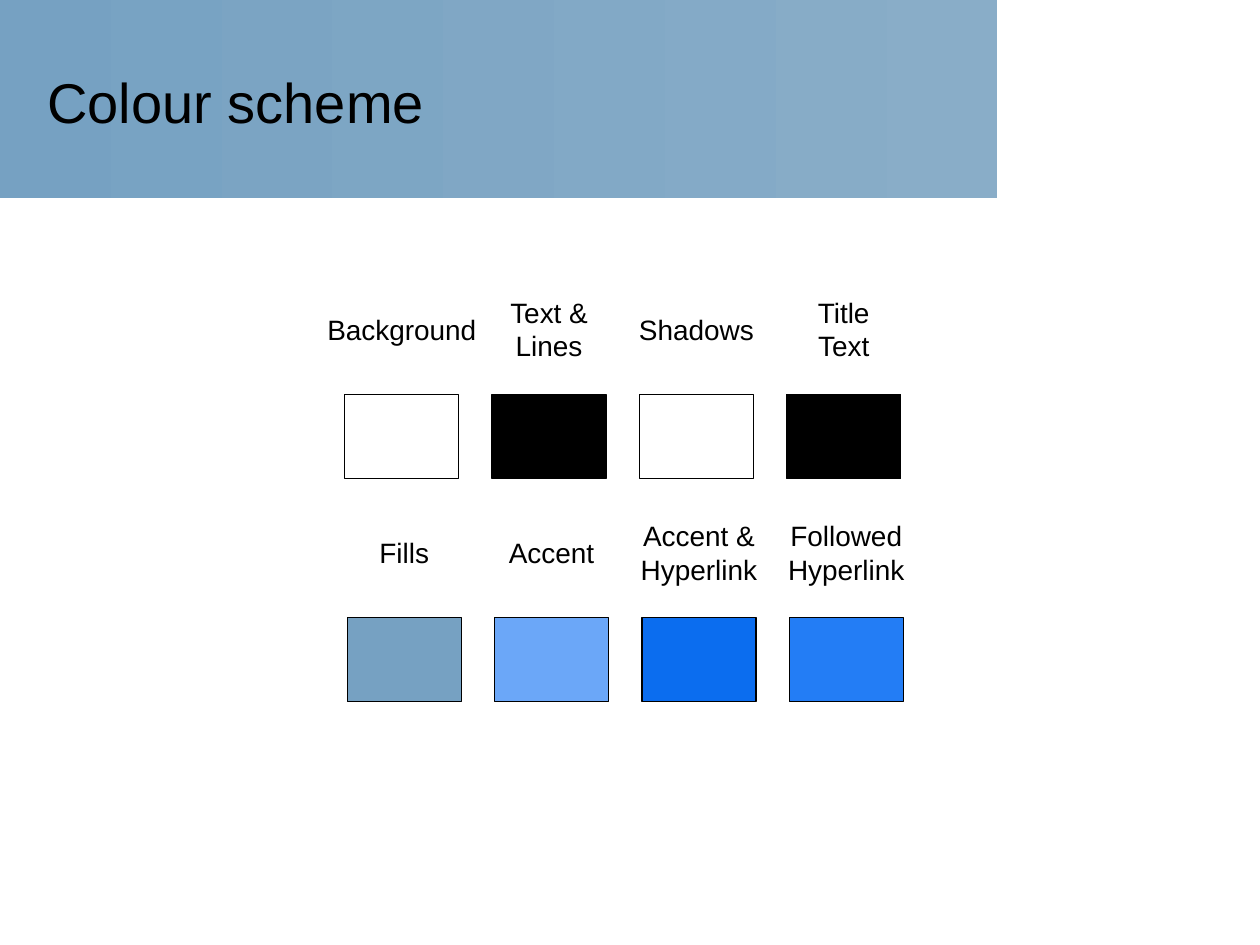
"""Build the colour scheme slide: a title banner and two rows of labelled swatches."""
from dataclasses import dataclass

from pptx import Presentation
from pptx.dml.color import RGBColor
from pptx.enum.shapes import MSO_SHAPE
from pptx.enum.text import MSO_ANCHOR, MSO_AUTO_SIZE, PP_ALIGN
from pptx.slide import Slide
from pptx.text.text import _Paragraph as Paragraph
from pptx.util import Cm, Pt

RECTANGLE = MSO_SHAPE.RECTANGLE
MIDDLE = MSO_ANCHOR.MIDDLE
FIT_SHAPE = MSO_AUTO_SIZE.SHAPE_TO_FIT_TEXT
NO_FIT = MSO_AUTO_SIZE.NONE
LEFT, CENTER = PP_ALIGN.LEFT, PP_ALIGN.CENTER

FONT = "Arial"
COLORS = {
    "background": "FFFFFF",
    "text": "000000",
    "shadow": "FFFFFF",
    "title": "000000",
    "fill": "76A1C2",
    "accent": "6BA7F8",
    "hyperlink": "0B6DEF",
    "followed": "237DF5",
    "banner end": "89ADC8",
}
SWATCH_WIDTH, SWATCH_HEIGHT, SWATCH_STEP = 2.3, 1.7, 2.97
LABEL_RISE = 1.31
LINE_HEIGHT, LABEL_PADDING = 0.68, 0.26


@dataclass
class Swatch:
    label: str
    color: str
    label_width: float


@dataclass
class SwatchRow:
    left: float
    top: float
    swatches: list[Swatch]


ROWS = [
    SwatchRow(6.95, 7.95, [
        Swatch("Background", "background", 3.55),
        Swatch("Text &\nLines", "text", 2.15),
        Swatch("Shadows", "shadow", 2.85),
        Swatch("Title\vText", "title", 1.65),
    ]),
    SwatchRow(7, 12.45, [
        Swatch("Fills", "fill", 1.55),
        Swatch("Accent", "accent", 2.25),
        Swatch("Accent &\nHyperlink", "hyperlink", 2.95),
        Swatch("Followed\nHyperlink", "followed", 2.95),
    ]),
]


def color(name: str) -> RGBColor:
    return RGBColor.from_string(COLORS[name])


def style(para: Paragraph, size: float, align: PP_ALIGN) -> None:
    para.alignment = align
    para.font.name = FONT
    para.font.size = Pt(size)
    para.font.color.rgb = color("text")


def add_banner(page: Slide) -> None:
    banner = page.shapes.add_shape(RECTANGLE, 0, 0, Cm(20.11), Cm(4))
    banner.shadow.inherit = False
    banner.line.fill.background()
    banner.fill.gradient()
    banner.fill.gradient_angle = 0
    for stop, name in zip(banner.fill.gradient_stops, ("fill", "banner end")):
        stop.color.rgb = color(name)
    page.shapes.element.insert(2, banner.element)


def add_title(page: Slide, text: str) -> None:
    title = page.shapes.title
    title.left, title.top, title.width, title.height = Cm(0.7), Cm(0.76), Cm(19), Cm(2.57)
    frame = title.text_frame
    frame.text = text
    frame.vertical_anchor = MIDDLE
    frame.auto_size = NO_FIT
    style(frame.paragraphs[0], 32, LEFT)


def add_swatch(page: Slide, swatch: Swatch, left: float, top: float) -> None:
    box = page.shapes.add_shape(
        RECTANGLE, Cm(left), Cm(top), Cm(SWATCH_WIDTH), Cm(SWATCH_HEIGHT))
    box.shadow.inherit = False
    box.fill.solid()
    box.fill.fore_color.rgb = color(swatch.color)
    box.line.color.rgb = color("text")
    box.line.width = Pt(0.75)


def add_label(page: Slide, swatch: Swatch, left: float, top: float) -> None:
    height = len(swatch.label.splitlines()) * LINE_HEIGHT + LABEL_PADDING
    label_left = left + (SWATCH_WIDTH - swatch.label_width) / 2
    label_top = top - LABEL_RISE - height / 2
    label = page.shapes.add_textbox(
        Cm(label_left), Cm(label_top), Cm(swatch.label_width), Cm(height))
    frame = label.text_frame
    frame.text = swatch.label
    frame.word_wrap = False
    frame.auto_size = FIT_SHAPE
    for para in frame.paragraphs:
        style(para, 16, CENTER)


def main() -> None:
    deck = Presentation()
    deck.slide_width, deck.slide_height = Cm(25.4), Cm(19.05)
    page = deck.slides.add_slide(deck.slide_layouts[5])
    add_banner(page)
    add_title(page, "Colour scheme")
    for row in ROWS:
        for column, swatch in enumerate(row.swatches):
            left = row.left + column * SWATCH_STEP
            add_swatch(page, swatch, left, row.top)
            add_label(page, swatch, left, row.top)
    deck.save("out.pptx")


if __name__ == "__main__":
    main()
